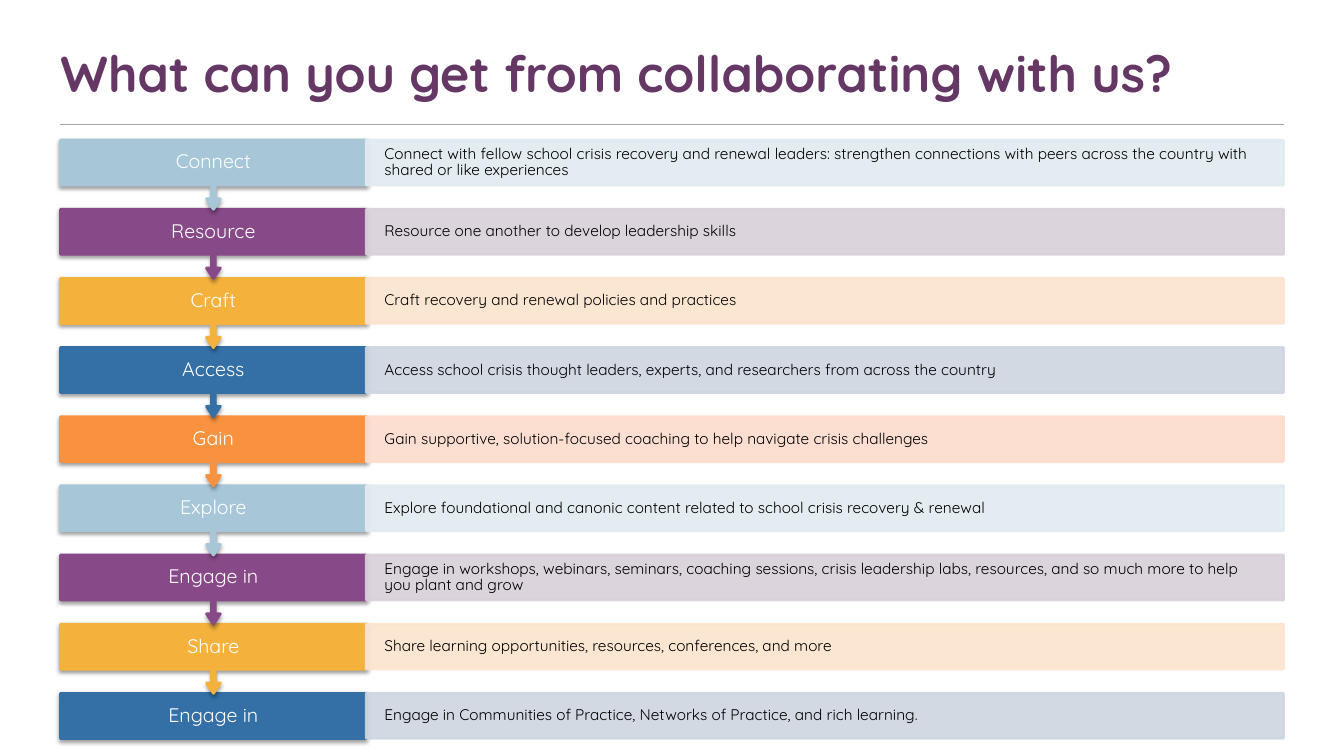
from dataclasses import dataclass

from lxml.etree import SubElement
from pptx import Presentation
from pptx.dml.color import RGBColor
from pptx.enum.shapes import MSO_CONNECTOR as Connector, MSO_SHAPE as Shape
from pptx.enum.text import MSO_ANCHOR as Anchor, MSO_AUTO_SIZE as AutoSize, PP_ALIGN as Align
from pptx.oxml.ns import qn
from pptx.util import Inches, Pt

FONT = "Quicksand"
LEFT, TOP = 0.6, 1.39
COLUMN, ROW = 12.13 / 4, 0.686
BAND = 0.65
TITLE_ROW, TITLE_ROWS, RULE_ROW = -1.55, 1.14, -0.23


@dataclass(frozen=True)
class Palette:
    strong: str
    pale: str


@dataclass(frozen=True)
class Step:
    label: str
    description: str
    palette: Palette


@dataclass(frozen=True)
class Cell:
    column: float
    row: float
    columns: float
    rows: float

    def box(self) -> tuple:
        return (Inches(LEFT + self.column * COLUMN), Inches(TOP + self.row * ROW),
                Inches(self.columns * COLUMN), Inches(self.rows * ROW))


@dataclass(frozen=True)
class TextStyle:
    size: float
    color: str
    align: Align
    inset_x: float
    inset_y: float
    bold: bool = False
    line_spacing: float = 0.9


SKY = Palette("A7C6D8", "E1EAF0")
PLUM = Palette("874987", "D9D0D9")
GOLD = Palette("F4B23D", "FBE4CE")
BLUE = Palette("346FA5", "CED5E1")
ORANGE = Palette("F9923E", "FDDCCE")

TITLE = TextStyle(36, "653765", Align.LEFT, 0, 0.07, True, 1)
LABEL = TextStyle(14, "FFFFFF", Align.CENTER, 0.22, 0.11)
DESCRIPTION = TextStyle(11, "000000", Align.LEFT, 0.18, 0.15)

STEPS = [
    Step("Connect", "Connect with fellow school crisis recovery and renewal leaders: strengthen "
         "connections with peers across the country with shared or like experiences", SKY),
    Step("Resource", "Resource one another to develop leadership skills", PLUM),
    Step("Craft", "Craft recovery and renewal policies and practices", GOLD),
    Step("Access", "Access school crisis thought leaders, experts, and researchers "
         "from across the country", BLUE),
    Step("Gain", "Gain supportive, solution-focused coaching to help navigate crisis challenges",
         ORANGE),
    Step("Explore", "Explore foundational and canonic content related to school crisis "
         "recovery & renewal", SKY),
    Step("Engage in", "Engage in workshops, webinars, seminars, coaching sessions, crisis "
         "leadership labs, resources, and so much more to help you plant and grow", PLUM),
    Step("Share", "Share learning opportunities, resources, conferences, and more", GOLD),
    Step("Engage in", "Engage in Communities of Practice, Networks of Practice, and rich learning.",
         BLUE),
]


def color(value: str) -> RGBColor:
    return RGBColor.from_string(value)


def write(shape, text: str, style: TextStyle) -> None:
    frame = shape.text_frame
    frame.text = text
    frame.word_wrap = True
    frame.auto_size = AutoSize.NONE
    frame.vertical_anchor = Anchor.MIDDLE
    frame.margin_left = frame.margin_right = Inches(style.inset_x)
    frame.margin_top = frame.margin_bottom = Inches(style.inset_y)
    paragraph = frame.paragraphs[0]
    paragraph.alignment = style.align
    paragraph.line_spacing = style.line_spacing
    font = paragraph.runs[0].font
    font.name, font.size, font.bold = FONT, Pt(style.size), style.bold
    font.color.rgb = color(style.color)


def add_block(slide, kind: Shape, cell: Cell, fill: str):
    shape = slide.shapes.add_shape(kind, *cell.box())
    shape.fill.solid()
    shape.fill.fore_color.rgb = color(fill)
    shape.line.color.rgb = color(fill)
    shape.line.width = Pt(2)
    shape.shadow.inherit = False
    return shape


def add_shadow(shape) -> None:
    effects = shape._element.spPr.find(qn("a:effectLst"))
    shadow = SubElement(effects, qn("a:outerShdw"), blurRad=str(Pt(3.1)), dist=str(Pt(1.6)),
                        dir="5400000", rotWithShape="0")
    shade = SubElement(shadow, qn("a:srgbClr"), val="000000")
    SubElement(shade, qn("a:alpha"), val="38000")


def soften(shape) -> None:
    for tint in shape._element.spPr.iter(qn("a:srgbClr")):
        SubElement(tint, qn("a:alpha"), val="90000")


def add_step(slide, row: int, step: Step, is_last: bool) -> None:
    label_cell = Cell(0, row, 1, BAND)
    if is_last:
        block = add_block(slide, Shape.RECTANGLE, label_cell, step.palette.strong)
    else:
        block = add_block(slide, Shape.UP_ARROW_CALLOUT, Cell(0, row, 1, 1), step.palette.strong)
        block.rotation = 180
        for index, share in enumerate((0.05, 0.1, 0.15, BAND)):
            block.adjustments[index] = share
    add_shadow(block)
    write(slide.shapes.add_textbox(*label_cell.box()), step.label, LABEL)

    band = add_block(slide, Shape.RECTANGLE, Cell(1, row, 3, BAND), step.palette.pale)
    soften(band)
    write(band, step.description, DESCRIPTION)


def add_heading(slide, text: str) -> None:
    title = slide.shapes.title
    title.left, title.top, title.width, title.height = Cell(0, TITLE_ROW, 4, TITLE_ROWS).box()
    write(title, text, TITLE)
    left, top, width, _ = Cell(0, RULE_ROW, 4, 0).box()
    rule = slide.shapes.add_connector(Connector.STRAIGHT, left, top, left + width, top)
    rule.line.color.rgb = color("A6A6A6")
    rule.line.width = Pt(0.75)
    SubElement(rule._element.spPr, qn("a:effectLst"))


def main() -> None:
    presentation = Presentation()
    presentation.slide_width, presentation.slide_height = Inches(13.33), Inches(7.5)
    slide = presentation.slides.add_slide(presentation.slide_layouts[5])
    add_heading(slide, "What can you get from collaborating with us?")
    last = len(STEPS) - 1
    for row, step in reversed(list(enumerate(STEPS))):
        add_step(slide, row, step, row == last)
    presentation.save("out.pptx")


if __name__ == "__main__":
    main()
